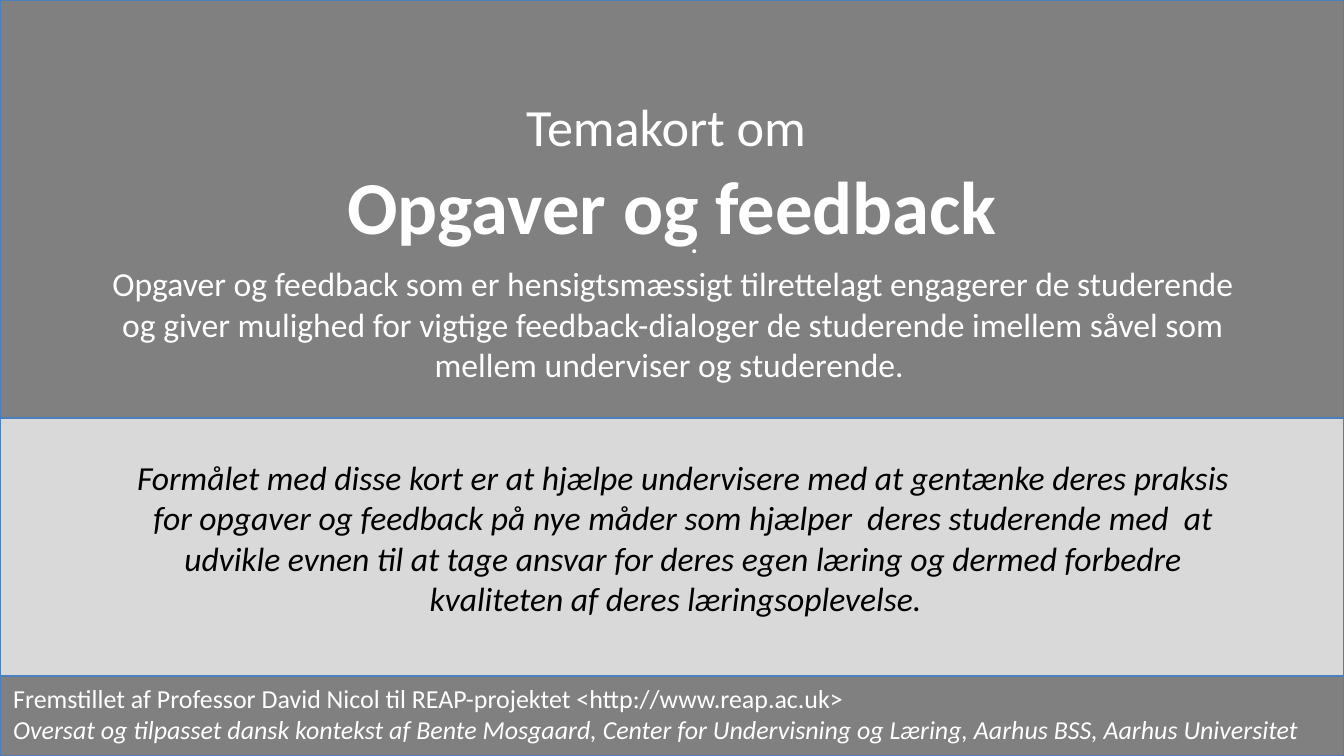
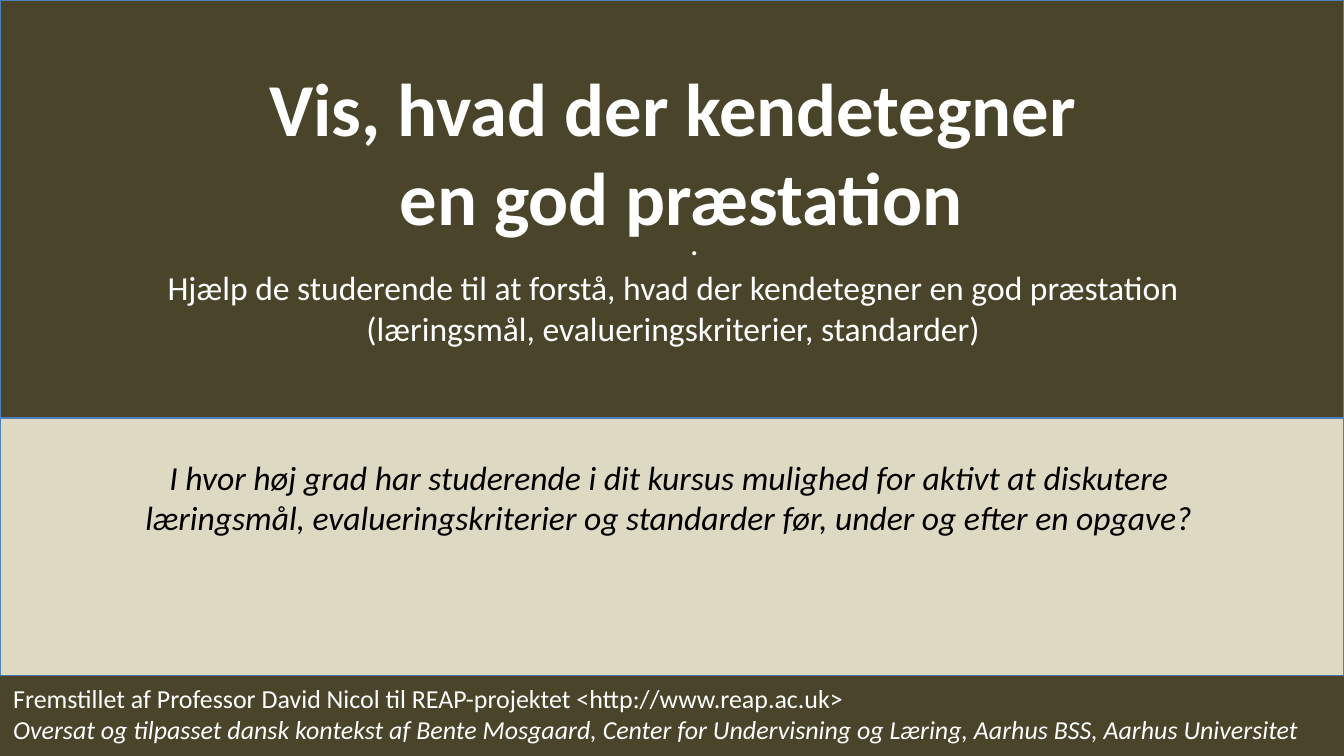
from pptx import Presentation
from pptx import util as u
from pptx.dml.color import RGBColor
from pptx.enum import shapes, text

WHITE = RGBColor(0xFF, 0xFF, 0xFF)
BLACK = RGBColor(0x00, 0x00, 0x00)
GREY = RGBColor(0x80, 0x80, 0x80)
LIGHT_GREY = RGBColor(0xD9, 0xD9, 0xD9)
OLIVE = RGBColor(0x4A, 0x45, 0x2A)
SAND = RGBColor(0xDD, 0xD9, 0xC3)
OUTLINE = RGBColor(0x4B, 0x7E, 0xBC)

FONT = "Calibri"
WIDTH, HEIGHT = 10, 5.625
HEADER_BOTTOM, FOOTER_TOP = 3.11, 5.03
TITLE_SIZE, LEAD_SIZE, BODY_SIZE, CREDIT_SIZE = 40, 28, 18, 13.9
CREDITS = [
    "Fremstillet af Professor David Nicol til REAP-projektet <http://www.reap.ac.uk>",
    "Oversat og tilpasset dansk kontekst af Bente Mosgaard, "
    "Center for Undervisning og Læring, Aarhus BSS, Aarhus Universitet",
]


class ThemeCards:
    """Holds the deck, the card being built and the shared style."""

    def __init__(self):
        self.deck = Presentation()
        self.deck.slide_width = u.Inches(WIDTH)
        self.deck.slide_height = u.Inches(HEIGHT)
        self.page = None

    def new_card(self, dark, light):
        self.page = self.deck.slides.add_slide(self.deck.slide_layouts[6])
        header = self.band(0, HEADER_BOTTOM, dark)
        self.band(HEADER_BOTTOM, FOOTER_TOP, light)
        self.band(FOOTER_TOP, HEIGHT, GREY)
        return header

    def band(self, top, bottom, color):
        box = self.page.shapes.add_shape(
            shapes.MSO_SHAPE.RECTANGLE, u.Inches(0), u.Inches(top),
            u.Inches(WIDTH), u.Inches(bottom - top))
        box.shadow.inherit = False
        box.fill.solid()
        box.fill.fore_color.rgb = color
        box.line.color.rgb = OUTLINE
        box.line.width = u.Pt(0.75)
        return box

    def style(self, para, size, color=WHITE, bold=False, italic=False,
              align=text.PP_ALIGN.CENTER):
        para.alignment = align
        for span in para.runs:
            span.font.name = FONT
            span.font.size = u.Pt(size)
            span.font.color.rgb = color
            span.font.bold = bold
            span.font.italic = italic

    def header_text(self, header, lead=None):
        """Write the optional lead line and the dot that separates title and summary."""
        frame = header.text_frame
        frame.word_wrap = True
        frame.vertical_anchor = text.MSO_ANCHOR.TOP
        frame.margin_top = u.Inches(0.7 if lead else 1.65)
        dot = frame.paragraphs[0]
        if lead:
            dot.text = lead
            self.style(dot, LEAD_SIZE)
            dot.space_after = u.Pt(34)
            dot = frame.add_paragraph()
        dot.text = ". "
        self.style(dot, BODY_SIZE)
        indent = dot._p.get_or_add_pPr()
        indent.set("marL", str(u.Inches(0.79)))
        indent.set("indent", str(u.Inches(-0.4)))

    def text_box(self, left, top, width, height, lines, size, fill=None,
                 wrap=True, **look):
        box = self.page.shapes.add_textbox(
            u.Inches(left), u.Inches(top), u.Inches(width), u.Inches(height))
        if fill is not None:
            box.fill.solid()
            box.fill.fore_color.rgb = fill
        frame = box.text_frame
        frame.word_wrap = wrap
        frame.text = "\n".join(lines)
        for para in frame.paragraphs:
            self.style(para, size, **look)
        return box

    def title(self, left, top, width, height, lines, wrap=True):
        self.text_box(left, top, width, height, lines, TITLE_SIZE, wrap=wrap, bold=True)

    def summary(self, top, height, line, fill=None):
        self.text_box(0.71, top, 8.6, height, [line], BODY_SIZE, fill)

    def reflection(self, width, height, line):
        self.text_box(0.86, 3.35, width, height, [line], BODY_SIZE,
                      color=BLACK, italic=True)

    def footer(self, fill=None):
        box = self.text_box(0, FOOTER_TOP, WIDTH, 0.61, CREDITS, CREDIT_SIZE, fill,
                            align=text.PP_ALIGN.LEFT)
        box.text_frame.paragraphs[1].runs[0].font.italic = True


def intro_card(cards):
    header = cards.new_card(GREY, LIGHT_GREY)
    cards.header_text(header, "Temakort om ")
    cards.reflection(
        8.45, 1.31,
        "Formålet med disse kort er at hjælpe undervisere med at gentænke deres "
        "praksis for opgaver og feedback på nye måder som hjælper  deres studerende "
        "med  at udvikle evnen til at tage ansvar for deres egen læring og dermed "
        "forbedre kvaliteten af deres læringsoplevelse.  ")
    cards.footer()
    cards.summary(
        1.91, 1.01,
        "Opgaver og feedback som er hensigtsmæssigt tilrettelagt engagerer de "
        "studerende og giver mulighed for vigtige feedback-dialoger de studerende "
        "imellem såvel som mellem underviser og studerende. ", GREY)
    cards.title(1.4, 1.14, 7.2, 0.77, ["Opgaver og feedback"])


def performance_card(cards):
    header = cards.new_card(OLIVE, SAND)
    cards.header_text(header)
    cards.footer(OLIVE)
    cards.title(1.85, 0.41, 6.31, 1.45,
                ["Vis, hvad der kendetegner", " en god præstation"], wrap=False)
    cards.summary(
        1.94, 0.71,
        "Hjælp de studerende til at forstå, hvad der kendetegner en god præstation "
        "(læringsmål, evalueringskriterier, standarder)")
    cards.reflection(
        8.24, 0.71,
        "I hvor høj grad har studerende i dit kursus mulighed for aktivt at diskutere "
        "læringsmål, evalueringskriterier og standarder før, under og efter en opgave?")


def main():
    cards = ThemeCards()
    intro_card(cards)
    performance_card(cards)
    cards.deck.save("out.pptx")


if __name__ == "__main__":
    main()
